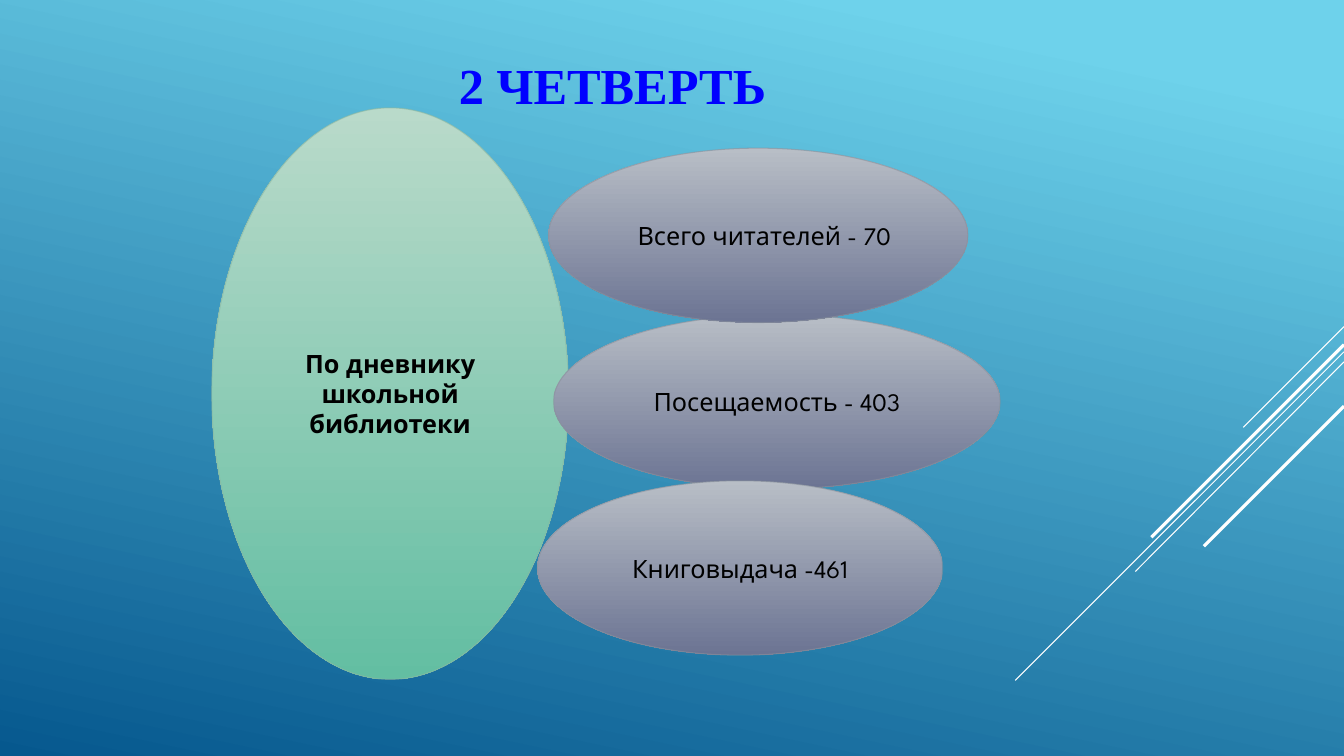
from lxml import etree
from pptx import Presentation
from pptx import util as u
from pptx.dml.color import RGBColor
from pptx.enum import shapes, text
from pptx.oxml.ns import qn

COLORS = {
    "sky": "6ED2EB", "deep": "06588E", "white": "FFFFFF", "black": "000000",
    "title": "0000FF", "mint": "B9DACA", "green": "63BEA2", "green_line": "8AB7A1",
    "silver": "B8BEC6", "slate": "6C7493", "slate_line": "89919C",
}
ALIGN = text.PP_ALIGN
OVAL = shapes.MSO_SHAPE


def color(name):
    return RGBColor.from_string(COLORS[name])


def write(frame, words, size=18, font="League Spartan", ink="black", bold=False,
          align=ALIGN.CENTER):
    frame.word_wrap = True
    frame.auto_size = text.MSO_AUTO_SIZE.NONE
    frame.vertical_anchor = text.MSO_ANCHOR.MIDDLE
    paragraph = frame.paragraphs[0]
    paragraph.alignment = align
    run = paragraph.add_run()
    run.text = words
    run.font.size = u.Pt(size)
    run.font.name = font
    run.font.bold = bold
    run.font.color.rgb = color(ink)


class SlideBuilder:
    def __init__(self, presentation):
        self.slide = presentation.slides.add_slide(presentation.slide_layouts[5])

    def gradient(self, fill, first, last, start=0, clockwise=90):
        fill.gradient()
        fill.gradient_angle = 360 - clockwise
        for stop, name, position in zip(fill.gradient_stops, (first, last), (start, 1)):
            stop.color.rgb = color(name)
            stop.position = position

    def background(self):
        self.gradient(self.slide.background.fill, "sky", "deep", start=0.1, clockwise=102)

    def title(self, words, left, top, width, height):
        title = self.slide.shapes.title
        title.left, title.top = u.Inches(left), u.Inches(top)
        title.width, title.height = u.Inches(width), u.Inches(height)
        write(title.text_frame, words, size=36, font="Times New Roman", ink="title",
              bold=True, align=ALIGN.LEFT)

    def ray(self, start_y, end_x, end_y, weight):
        ends = [u.Inches(value) for value in (13.33, start_y, end_x, end_y)]
        line = self.slide.shapes.add_connector(shapes.MSO_CONNECTOR.STRAIGHT, *ends)
        line.line.color.rgb = color("white")
        line.line.width = u.Pt(weight)
        etree.SubElement(line._element.spPr, qn("a:effectLst"))

    def oval(self, kind, words, box, fills, outline, bold=False, inset=0.1):
        shape = self.slide.shapes.add_shape(kind, *[u.Inches(value) for value in box])
        shape.shadow.inherit = False
        self.gradient(shape.fill, *fills)
        shape.line.color.rgb = color(outline)
        shape.line.width = u.Pt(0.75)
        # Outline at 60 % opacity
        tint = shape.line._ln.find(".//" + qn("a:srgbClr"))
        etree.SubElement(tint, qn("a:alpha"), val="60000")
        shape.text_frame.margin_left = u.Inches(inset)
        write(shape.text_frame, words, bold=bold)


def main():
    presentation = Presentation()
    presentation.slide_width = u.Inches(13.33)
    presentation.slide_height = u.Inches(7.5)
    builder = SlideBuilder(presentation)
    builder.background()

    # Diagonal rays from the right edge
    for ray in [(3.24, 12.33, 4.24, 0.75), (3.49, 10.07, 6.75, 0.75),
                (3.59, 11.26, 5.67, 0.75), (3.42, 11.42, 5.33, 2.25),
                (4.03, 11.94, 5.42, 2.25)]:
        builder.ray(*ray)

    builder.title("2 ЧЕТВЕРТЬ", 4.45, 0.21, 6.21, 1.25)

    # Source of the figures
    builder.oval(OVAL.OVAL, "По дневнику школьной библиотеки", (2.1, 1.07, 3.54, 5.67),
                 ("mint", "green"), "green_line", bold=True)

    # Library figures, the middle one at the back
    for words, left, top, width, inset in [
            ("Посещаемость - 403", 5.49, 3.12, 4.43, 0.1),
            ("Всего читателей - 70", 5.44, 1.47, 4.16, 0.22),
            ("Книговыдача -461", 5.33, 4.77, 4.02, 0.1)]:
        builder.oval(OVAL.FLOWCHART_CONNECTOR, words, (left, top, width, 1.73),
                     ("silver", "slate"), "slate_line", inset=inset)

    presentation.save("out.pptx")


if __name__ == "__main__":
    main()
